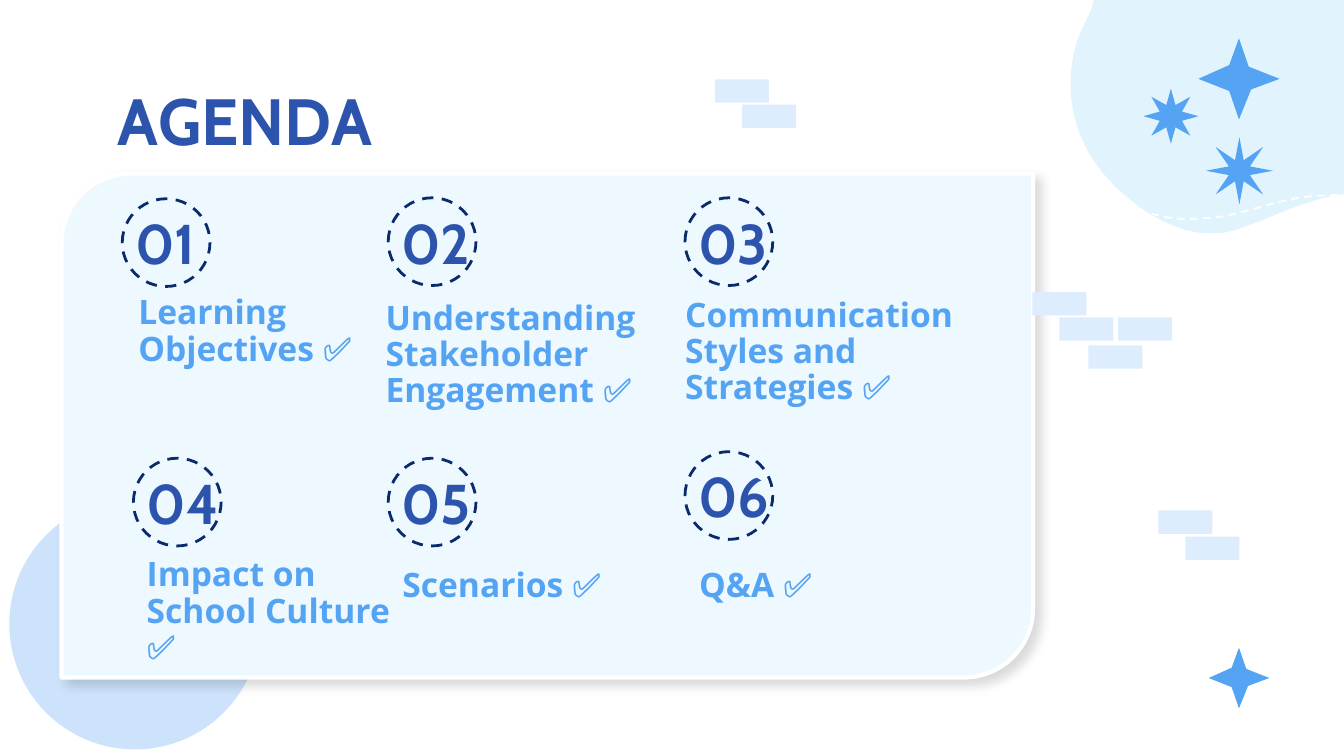
from pptx import Presentation
from pptx.dml.color import RGBColor
from pptx.enum.dml import MSO_LINE
from pptx.enum.shapes import MSO_SHAPE
from pptx.enum.text import MSO_ANCHOR, MSO_AUTO_SIZE, PP_ALIGN
from pptx.oxml import parse_xml
from pptx.oxml.ns import nsdecls
from pptx.util import Pt

NAVY, BLUE, SKY, BRICK = "0A2A6B", "2C54AC", "55A3F3", "DDEDFD"
WHITE, BLOB, CIRCLE, PANEL = "FFFFFF", "E1F4FD", "CCE3FB", "EDF9FF"

HEADING = {"name": "Cabin", "size": Pt(35), "bold": True}
NUMBER = {"name": "Cabin", "size": Pt(30), "bold": True}
LABEL = {"name": "Open Sans", "size": Pt(18), "bold": True}
FRAME = {"word_wrap": True, "auto_size": MSO_AUTO_SIZE.NONE,
         "margin_left": Pt(7.2), "margin_right": Pt(7.2),
         "margin_top": Pt(7.2), "margin_bottom": Pt(7.2)}
DASHED = {"width": Pt(1.5), "dash_style": MSO_LINE.DASH}

# number, ring left and top, label, label left, top and width
TOPICS = [
    ("01", 65.5, 106.5, "Learning Objectives ✅", 67, 164, 181),
    ("02", 208, 106, "Understanding Stakeholder Engagement ✅", 199.5, 176.5, 227),
    ("03", 367, 106, "Communication Styles and Strategies ✅", 360, 175, 181),
    ("04", 71.5, 245.5, "Impact on School Culture ✅", 71.5, 314, 145),
    ("05", 208, 245.5, "Scenarios ✅", 208.5, 300.5, 129),
    ("06", 367, 242, "Q&A ✅", 367.5, 300.5, 125),
]
BRICKS = [(635, 287.5), (620.5, 273.5), (397.5, 56), (383, 42.5),
          (599, 170), (567.5, 170), (583, 185), (553, 156.5)]
SPARKLE = [(0.5, 0), (0.38, 0.33), (0, 0.5), (0.38, 0.65),
           (0.5, 1), (0.65, 0.63), (1, 0.5), (0.62, 0.35)]
BLOB_EDGE = [(586, 0), (585, 6), (580, 14), (577, 22), (569, 47), (575, 75),
             (592, 94), (598, 101), (605, 107), (612, 112), (624, 120),
             (636, 125), (648, 125), (652, 125), (655, 125), (659, 124),
             (674, 120), (688, 112), (703, 108), (708, 106), (714, 105), (720, 104)]
BLOB_STITCH = [(617, 114.5), (625, 117), (635, 118), (643, 117), (660, 117),
               (675, 110), (691, 107), (700, 105), (710, 104.5), (720, 104.5)]


def color(value):
    """Turn a hex string into a colour."""
    return RGBColor.from_string(value)


def apply(target, formats):
    """Set every format value on the target."""
    for key, value in formats.items():
        setattr(target, key, value)


def paint(shape, fill=None, line=None, line_format=None):
    """Set fill and outline, and drop the theme shadow."""
    shape.shadow.inherit = False
    if fill:
        shape.fill.solid()
        shape.fill.fore_color.rgb = color(fill)
    else:
        shape.fill.background()
    if line:
        shape.line.color.rgb = color(line)
        apply(shape.line, line_format)
    else:
        shape.line.fill.background()
    return shape


def add_preset(slide, kind, box, **style):
    """Add a painted preset shape."""
    return paint(slide.shapes.add_shape(kind, *map(Pt, box)), **style)


def add_outline(slide, points, closed=True, **style):
    """Add a painted freeform through the points."""
    corners = [(Pt(x), Pt(y)) for x, y in points]
    builder = slide.shapes.build_freeform(*corners[0])
    builder.add_line_segments(corners[1:], close=closed)
    return paint(builder.convert_to_shape(), **style)


def curve(controls, steps=12):
    """Sample a chain of cubic Bezier segments."""
    points = [controls[0]]
    for start in range(0, len(controls) - 1, 3):
        segment = controls[start:start + 4]
        for step in range(1, steps + 1):
            t = step / steps
            weights = ((1 - t) ** 3, 3 * t * (1 - t) ** 2, 3 * t * t * (1 - t), t ** 3)
            points.append(tuple(sum(w * p[axis] for w, p in zip(weights, segment))
                                for axis in (0, 1)))
    return points


def write(holder, text, font, hue, anchor=MSO_ANCHOR.MIDDLE, spacing=1.0):
    """Write one formatted paragraph into a text holder."""
    frame = holder.text_frame
    apply(frame, {**FRAME, "vertical_anchor": anchor})
    paragraph = frame.paragraphs[0]
    apply(paragraph, {"alignment": PP_ALIGN.LEFT, "line_spacing": spacing})
    run = paragraph.add_run()
    run.text = text
    apply(run.font, font)
    run.font.color.rgb = color(hue)


def add_text(slide, box, *content, **layout):
    """Add a text box with its content."""
    write(slide.shapes.add_textbox(*map(Pt, box)), *content, **layout)


def add_title(slide, text):
    """Place and fill the title placeholder."""
    title = slide.shapes.title
    apply(title, {"left": Pt(56), "top": Pt(35.5), "width": Pt(608), "height": Pt(45)})
    write(title, text, HEADING, BLUE, anchor=MSO_ANCHOR.TOP)


def add_panel(slide):
    """Add the agenda panel with its soft shadow."""
    panel = add_preset(slide, MSO_SHAPE.ROUND_2_DIAG_RECTANGLE, (33, 93, 520.5, 270),
                       fill=PANEL, line=WHITE, line_format={"width": Pt(2.25)})
    panel.adjustments[0] = 0.138
    panel.adjustments[1] = 0
    properties = panel.fill._xPr
    effects = properties.find("{*}effectLst")
    effects.append(parse_xml(
        f'<a:outerShdw {nsdecls("a")} blurRad="{Pt(5.6)}" dist="{Pt(4.5)}" '
        f'dir="{44 * 60000}" algn="bl" rotWithShape="0"><a:srgbClr val="000000">'
        '<a:alpha val="15000"/></a:srgbClr></a:outerShdw>'))


def add_sparkle(slide, left, top, size):
    """Add a four-pointed star."""
    add_outline(slide, [(left + x * size, top + y * size) for x, y in SPARKLE], fill=SKY)


def add_burst(slide, left, top, size, depth):
    """Add an eight-pointed star."""
    burst = add_preset(slide, MSO_SHAPE.STAR_8_POINT, (left, top, size, size), fill=SKY)
    burst.adjustments[0] = depth


def add_topic(slide, number, left, top, label, label_left, label_top, label_width):
    """Add one ringed number and its label."""
    add_preset(slide, MSO_SHAPE.OVAL, (left, top, 47, 47), line=NAVY, line_format=DASHED)
    add_text(slide, (left, top + 8, 105, 31), number, NUMBER, BLUE)
    add_text(slide, (label_left, label_top, label_width, 28), label, LABEL, SKY, spacing=0.9)


def main():
    """Build the agenda slide."""
    deck = Presentation()
    apply(deck, {"slide_width": Pt(720), "slide_height": Pt(405)})
    slide = deck.slides.add_slide(deck.slide_layouts[5])
    add_outline(slide, curve(BLOB_EDGE) + [(720, 0)], fill=BLOB)
    add_outline(slide, curve(BLOB_STITCH), closed=False, line=WHITE,
                line_format={**DASHED, "width": Pt(1)})
    add_preset(slide, MSO_SHAPE.OVAL, (5, 267, 134.5, 134.5), fill=CIRCLE)
    add_panel(slide)
    for left, top in BRICKS:
        add_preset(slide, MSO_SHAPE.RECTANGLE, (left, top, 29, 12.5), fill=BRICK)
    add_title(slide, "AGENDA")
    for topic in TOPICS:
        add_topic(slide, *topic)
    add_sparkle(slide, 642, 20.5, 43.5)
    add_sparkle(slide, 647.5, 347, 32.5)
    add_burst(slide, 646, 73.5, 36, 0.169)
    add_burst(slide, 612.5, 47.5, 29.5, 0.218)
    deck.save("out.pptx")


if __name__ == "__main__":
    main()
